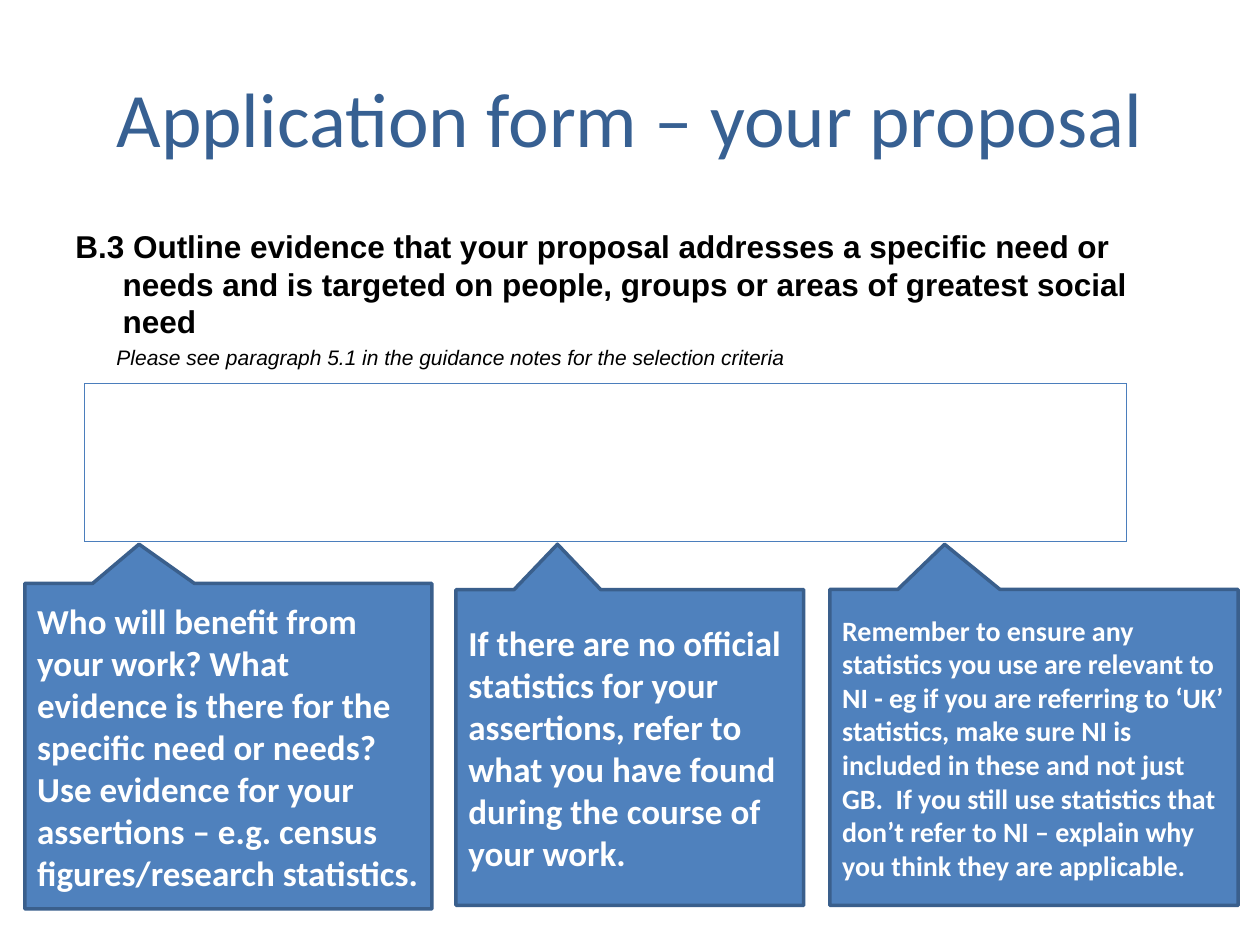
import pptx
import pptx.dml.color
import pptx.enum.shapes
import pptx.enum.text
import pptx.oxml
import pptx.oxml.ns
import pptx.util

Pt = pptx.util.Pt
ALIGN = pptx.enum.text.PP_ALIGN
ANCHOR = pptx.enum.text.MSO_ANCHOR


def color(value):
    """Return the RGB colour for a hex string."""
    return pptx.dml.color.RGBColor.from_string(value)


def set_text(p, text, font, size, fill, bold=False, italic=False):
    """Fill a paragraph with one formatted run."""
    p.text = text
    f = p.runs[0].font
    f.name, f.size, f.bold, f.italic = font, Pt(size), bold, italic
    f.color.rgb = color(fill)


def add_box(s, box, anchor):
    """Add a wrapping text box and return its text frame."""
    tf = s.shapes.add_textbox(*map(Pt, box)).text_frame
    tf.word_wrap = True
    tf.vertical_anchor = anchor
    return tf


def add_title(s, box, text):
    """Add the centred slide title."""
    p = add_box(s, box, ANCHOR.MIDDLE).paragraphs[0]
    set_text(p, text, "Calibri", 44, "376092")
    p.alignment = ALIGN.CENTER


def add_question(s, box, question, hint):
    """Add the form question with its hanging indent and the hint below."""
    tf = add_box(s, box, ANCHOR.TOP)
    rows = [
        (question, 18, True, False, 27, -27),
        (hint, 12, False, True, 23.5, 0),
    ]
    for i, (text, size, bold, italic, margin, indent) in enumerate(rows):
        p = tf.add_paragraph() if i else tf.paragraphs[0]
        set_text(p, text, "Arial", size, "000000", bold, italic)
        p.space_before = Pt(size * 0.2)
        pPr = p._p.get_or_add_pPr()
        pPr.set("marL", str(Pt(margin)))
        pPr.set("indent", str(Pt(indent)))


def add_answer_frame(s, box):
    """Draw the empty answer field as four lines."""
    left, top, width, height = box
    right, bottom = left + width, top + height
    edges = [
        (left, top, right, top),
        (left, top, left, bottom),
        (right, top, right, bottom),
        (left, bottom, right, bottom),
    ]
    for edge in edges:
        line = s.shapes.add_connector(
            pptx.enum.shapes.MSO_CONNECTOR.STRAIGHT, *map(Pt, edge))
        line.line.color.rgb = color("4B7EBC")
        line.line.width = Pt(0.75)
        line._element.spPr.append(pptx.oxml.parse_xml(
            "<a:effectLst %s/>" % pptx.oxml.ns.nsdecls("a")))


def add_callout(s, box, tip, text, size):
    """Add an advice callout whose pointer ends at the tip."""
    left, top, width, height = box
    sp = s.shapes.add_shape(
        pptx.enum.shapes.MSO_SHAPE.RECTANGULAR_CALLOUT, *map(Pt, box))
    sp.adjustments[0] = (tip[0] - left) / width - 0.5
    sp.adjustments[1] = (tip[1] - top) / height - 0.5
    sp.shadow.inherit = False
    sp.fill.solid()
    sp.fill.fore_color.rgb = color("4F81BD")
    sp.line.color.rgb = color("3A5F8C")
    sp.line.width = Pt(2)
    tf = sp.text_frame
    tf.word_wrap = True
    tf.vertical_anchor = ANCHOR.MIDDLE
    set_text(tf.paragraphs[0], text, "Calibri", size, "FFFFFF", True)
    tf.paragraphs[0].alignment = ALIGN.LEFT


def main():
    """Build the application form slide."""
    prs = pptx.Presentation()
    prs.slide_width, prs.slide_height = Pt(720), Pt(540)
    s = prs.slides.add_slide(prs.slide_layouts[6])
    add_title(s, (36, 21.6, 648, 90), "Application form – your proposal")
    add_question(
        s, (36, 126, 648, 356.4),
        "B.3 Outline evidence that your proposal addresses a specific need or "
        "needs and is targeted on people, groups or areas of greatest social need",
        "Please see paragraph 5.1 in the guidance notes for the selection criteria")
    add_answer_frame(s, (48.2, 219, 595.5, 90.6))
    callouts = [
        ((14.2, 333.4, 232.6, 186), 79.5, 20,
         "Who will benefit from your work? What evidence is there for the "
         "specific need or needs? Use evidence for your assertions – e.g. "
         "census figures/research statistics."),
        ((260.6, 337, 198.7, 180.4), 318.6, 20,
         "If there are no official statistics for your assertions, refer to "
         "what you have found during the course of your work."),
        ((474.2, 336.8, 233.3, 180.6), 539.8, 16,
         "Remember to ensure any statistics you use are relevant to NI - eg if "
         "you are referring to ‘UK’ statistics, make sure NI is included in "
         "these and not just GB.  If you still use statistics that don’t refer "
         "to NI – explain why you think they are applicable."),
    ]
    for box, tip_x, size, text in callouts:
        add_callout(s, box, (tip_x, 311), text, size)
    prs.save("out.pptx")


if __name__ == "__main__":
    main()
